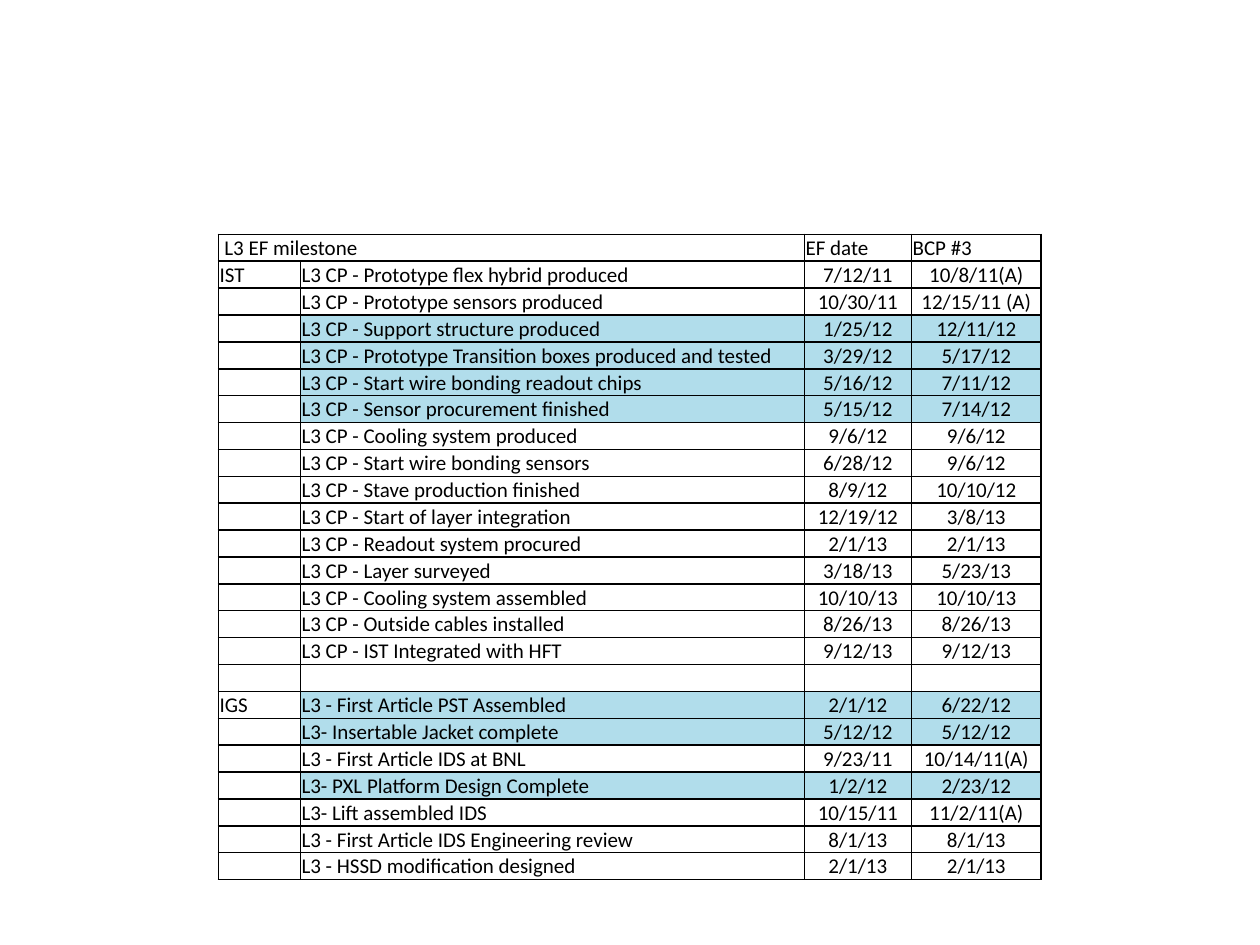
from pptx import Presentation
from pptx.dml.color import RGBColor as RGB
from pptx.enum.text import MSO_ANCHOR as ANCHOR, PP_ALIGN as ALIGN
from pptx.oxml.xmlchemy import OxmlElement
from pptx.util import Pt

COLORS = {"text": "000000", "border": "000000", "plain": "FFFFFF", "marked": "B1DDEB"}
FONT, SIZE = "Calibri", 12
COL_WIDTHS = [46.8, 288, 61.2, 74.16]
ROW_HEIGHT = 13.68

HEADER = [" L3 EF milestone", "", "EF date", "BCP #3"]
# Group, milestone, EF date, BCP #3 date
MILESTONES = [
    ["IST", "L3 CP - Prototype flex hybrid produced", "7/12/11", "10/8/11(A)"],
    ["", "L3 CP - Prototype sensors produced", "10/30/11", "12/15/11 (A)"],
    ["", "L3 CP - Support structure produced", "1/25/12", "12/11/12"],
    ["", "L3 CP - Prototype Transition boxes produced and tested", "3/29/12", "5/17/12"],
    ["", "L3 CP - Start wire bonding readout chips", "5/16/12", "7/11/12"],
    ["", "L3 CP - Sensor procurement finished", "5/15/12", "7/14/12"],
    ["", "L3 CP - Cooling system produced", "9/6/12", "9/6/12"],
    ["", "L3 CP - Start wire bonding sensors", "6/28/12", "9/6/12"],
    ["", "L3 CP - Stave production finished", "8/9/12", "10/10/12"],
    ["", "L3 CP - Start of layer integration", "12/19/12", "3/8/13"],
    ["", "L3 CP - Readout system procured", "2/1/13", "2/1/13"],
    ["", "L3 CP - Layer surveyed", "3/18/13", "5/23/13"],
    ["", "L3 CP - Cooling system assembled", "10/10/13", "10/10/13"],
    ["", "L3 CP - Outside cables installed", "8/26/13", "8/26/13"],
    ["", "L3 CP - IST Integrated with HFT", "9/12/13", "9/12/13"],
    ["", "", "", ""],
    ["IGS", "L3 - First Article PST Assembled", "2/1/12", "6/22/12"],
    ["", "L3- Insertable Jacket complete", "5/12/12", "5/12/12"],
    ["", "L3 - First Article IDS at BNL", "9/23/11", "10/14/11(A)"],
    ["", "L3- PXL Platform Design Complete", "1/2/12", "2/23/12"],
    ["", "L3- Lift assembled IDS", "10/15/11", "11/2/11(A)"],
    ["", "L3 - First Article IDS Engineering review", "8/1/13", "8/1/13"],
    ["", "L3 - HSSD modification designed", "2/1/13", "2/1/13"],
]
MARKED_ROWS = {3, 4, 5, 6, 17, 18, 20}


def set_borders(cell, width=1):
    tcPr = cell._tc.get_or_add_tcPr()
    for i, side in enumerate(("lnL", "lnR", "lnT", "lnB")):
        ln = OxmlElement(f"a:{side}")
        ln.set("w", str(Pt(width)))
        fill = OxmlElement("a:solidFill")
        color = OxmlElement("a:srgbClr")
        color.set("val", COLORS["border"])
        fill.append(color)
        ln.append(fill)
        tcPr.insert(i, ln)  # borders come before the cell fill


def fill_cell(cell, text, color, align):
    cell.margin_left = cell.margin_right = cell.margin_top = Pt(0.72)
    cell.margin_bottom = 0
    cell.vertical_anchor = ANCHOR.BOTTOM
    cell.fill.solid()
    cell.fill.fore_color.rgb = RGB.from_string(color)
    set_borders(cell)

    p = cell.text_frame.paragraphs[0]
    p.text = text
    p.alignment = align
    for r in p.runs:
        r.font.name, r.font.size = FONT, Pt(SIZE)
        r.font.color.rgb = RGB.from_string(COLORS["text"])
    if not text:
        # Keep empty cells from growing to the default text size
        end = OxmlElement("a:endParaRPr")
        end.set("sz", str(SIZE * 100))
        p._p.append(end)


def add_milestone_table(s, left, top, height):
    rows = [HEADER] + MILESTONES
    frame = s.shapes.add_table(len(rows), len(COL_WIDTHS), Pt(left), Pt(top),
                               Pt(sum(COL_WIDTHS)), Pt(ROW_HEIGHT * len(rows)))
    table = frame.table
    table.first_row = table.horz_banding = False
    for col, width in zip(table.columns, COL_WIDTHS):
        col.width = Pt(width)
    for i, row in enumerate(rows):
        for j, text in enumerate(row):
            marked = i in MARKED_ROWS and j > 0
            color = COLORS["marked" if marked else "plain"]
            align = ALIGN.CENTER if i > 0 and j > 1 else ALIGN.LEFT
            fill_cell(table.cell(i, j), text, color, align)
    table.cell(0, 0).merge(table.cell(0, 1))
    frame.height = Pt(height)


def main():
    prs = Presentation()
    prs.slide_width, prs.slide_height = Pt(720), Pt(540)
    s = prs.slides.add_slide(prs.slide_layouts[6])
    add_milestone_table(s, 124.8, 133.9, 369.4)
    prs.save("out.pptx")


if __name__ == "__main__":
    main()
